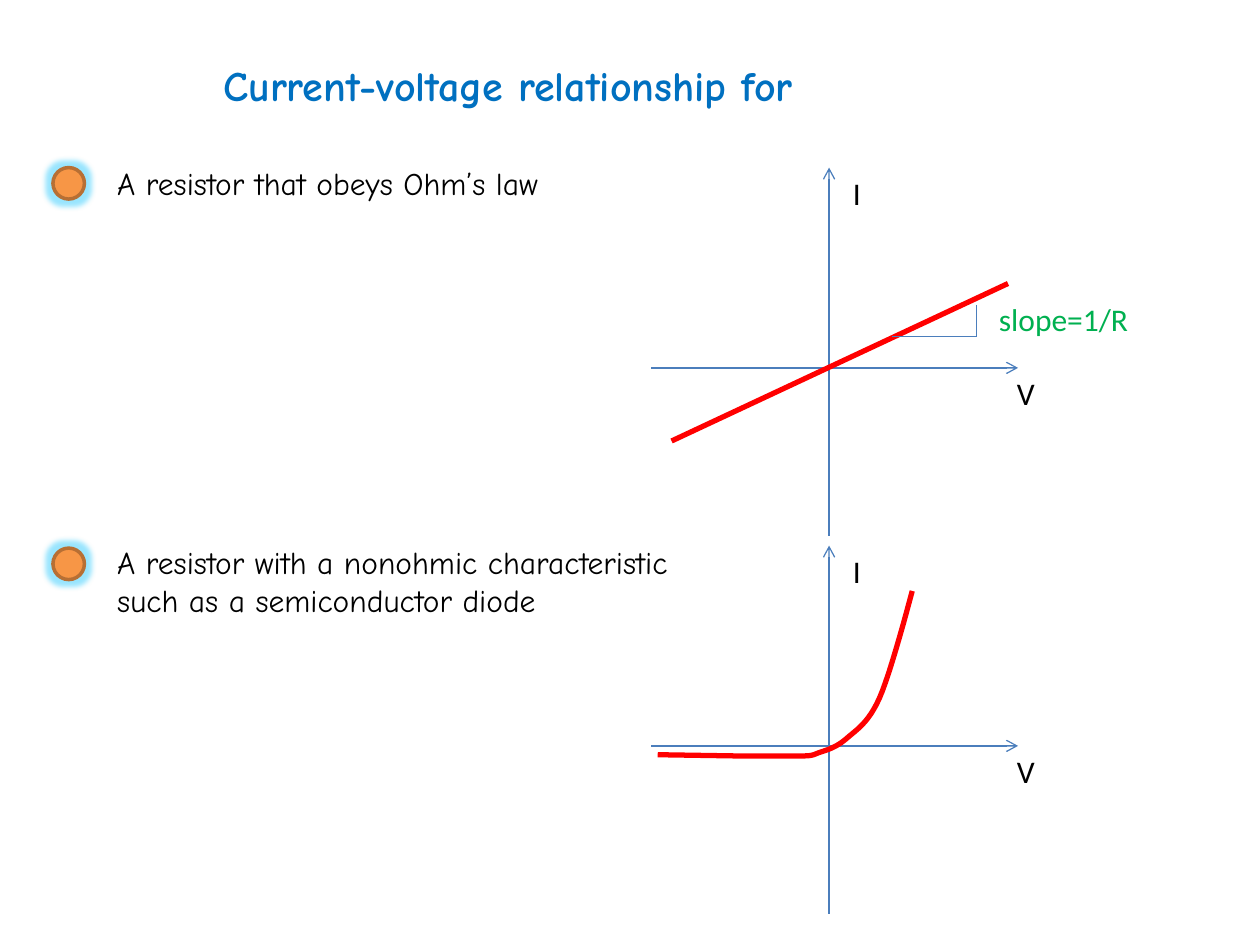
from lxml.etree import SubElement
from pptx import Presentation
from pptx.dml.color import RGBColor
from pptx.enum.shapes import MSO_CONNECTOR as Connector, MSO_SHAPE as Shape
from pptx.enum.text import MSO_ANCHOR as Anchor, MSO_AUTO_SIZE as AutoSize, PP_ALIGN as Align
from pptx.oxml.ns import qn
from pptx.util import Inches, Pt

AXIS_COLOR = "4B7EBC"
CURVE_COLOR = "FF0000"
DIODE_START = (5.22, 5.99)
DIODE_KNEE = (5.88, 6)
DIODE_BENDS = [
    ((6.07, 6), (6.25, 6), (6.35, 6)),
    ((6.46, 6), (6.45, 5.99), (6.51, 5.97)),
    ((6.57, 5.95), (6.64, 5.93), (6.72, 5.86)),
    ((6.8, 5.79), (6.89, 5.74), (6.98, 5.54)),
    ((7.07, 5.34), (7.24, 4.69), (7.24, 4.69)),
]


def rgb(color):
    """Turn a hex string into a colour."""
    return RGBColor.from_string(color)


def style_line(line, color, width):
    """Set the colour and the width of a line."""
    line.color.rgb = rgb(color)
    line.width = Pt(width)


def write_lines(frame, lines, font_name, size, color, bold=False):
    """Fill a text frame with left-aligned, unbulleted paragraphs."""
    frame.auto_size = AutoSize.NONE
    frame.vertical_anchor = Anchor.TOP
    frame.text = "\n".join(lines)
    for paragraph in frame.paragraphs:
        properties = paragraph._p.get_or_add_pPr()
        properties.set("marL", "0")
        properties.set("indent", "0")
        SubElement(properties, qn("a:buNone"))
        paragraph.alignment = Align.LEFT
        paragraph.space_before = Pt(0)
        font = paragraph.font
        font.name, font.size, font.bold = font_name, Pt(size), bold
        font.color.rgb = rgb(color)


def place(shape, left, top, width, height):
    """Move and resize a placeholder."""
    shape.left, shape.top = Inches(left), Inches(top)
    shape.width, shape.height = Inches(width), Inches(height)


def add_label(slide, text, left, top, width, color="000000", wrap=False):
    """Add a one-line graph label."""
    box = slide.shapes.add_textbox(Inches(left), Inches(top), Inches(width), Inches(0.4))
    box.text_frame.word_wrap = wrap
    write_lines(box.text_frame, [text], "Calibri", 18, color)


def add_line(slide, start, end, color=AXIS_COLOR, width=0.75, arrow=False):
    """Add a straight line, with an optional arrowhead at its end."""
    line = slide.shapes.add_connector(Connector.STRAIGHT, *map(Inches, start + end))
    style_line(line.line, color, width)
    SubElement(line._element.spPr, qn("a:effectLst"))
    if arrow:
        SubElement(line.line._get_or_add_ln(), qn("a:tailEnd"), type="arrow")


def add_marker(slide, left, top):
    """Add a glowing round list marker."""
    marker = slide.shapes.add_shape(Shape.OVAL, Inches(left), Inches(top), Inches(0.25), Inches(0.25))
    marker.fill.solid()
    marker.fill.fore_color.rgb = rgb("F79646")
    style_line(marker.line, "B76F34", 2)
    marker.shadow.inherit = False
    effects = marker._element.spPr.find(qn("a:effectLst"))
    glow = SubElement(effects, qn("a:glow"), rad=str(Pt(6)))
    color = SubElement(glow, qn("a:srgbClr"), val="33CCFF")
    SubElement(color, qn("a:alpha"), val="50000")


def add_axes(slide, center_x, center_y):
    """Add the current and voltage axes with their labels."""
    add_line(slide, (center_x, center_y + 1.33), (center_x, center_y - 1.59), arrow=True)
    add_line(slide, (center_x - 1.41, center_y), (center_x + 1.5, center_y), arrow=True)
    add_label(slide, "I", center_x + 0.09, center_y - 1.59, 0.27)
    add_label(slide, "V", center_x + 1.42, center_y, 0.17, wrap=True)


def bezier_points(start, first, second, end, steps=12):
    """Return points along a cubic curve, without its start."""
    points = []
    for step in range(1, steps + 1):
        t = step / steps
        weights = ((1 - t) ** 3, 3 * t * (1 - t) ** 2, 3 * t * t * (1 - t), t ** 3)
        points.append(tuple(
            sum(weight * value for weight, value in zip(weights, values))
            for values in zip(start, first, second, end)))
    return points


def add_diode_curve(slide):
    """Add the smooth characteristic of the diode."""
    points = [DIODE_KNEE]
    for bend in DIODE_BENDS:
        points += bezier_points(points[-1], *bend)
    builder = slide.shapes.build_freeform(*map(Inches, DIODE_START))
    builder.add_line_segments([(Inches(x), Inches(y)) for x, y in points], close=False)
    curve = builder.convert_to_shape()
    curve.fill.background()
    style_line(curve.line, CURVE_COLOR, 3)
    curve.shadow.inherit = False


def main():
    """Build the slide and save it."""
    presentation = Presentation()
    presentation.slide_width, presentation.slide_height = Inches(10), Inches(7.5)
    slide = presentation.slides.add_slide(presentation.slide_layouts[3])
    title, ohmic, nonohmic = slide.placeholders

    place(title, 1.67, 0.42, 6.5, 0.5)
    write_lines(title.text_frame, ["Current-voltage relationship for"], "Comic Neue", 24, "0070C0", True)
    place(ohmic, 0.83, 1.25, 4.33, 0.4)
    write_lines(ohmic.text_frame, ["A resistor that obeys Ohm’s law"], "Comic Neue", 18, "000000")
    place(nonohmic, 0.83, 4.26, 6.17, 0.71)
    write_lines(
        nonohmic.text_frame,
        ["A resistor with a nonohmic characteristic", "such as a semiconductor diode"],
        "Comic Neue", 18, "000000")

    for marker_top, center_y in ((1.33, 2.92), (4.35, 5.92)):
        add_marker(slide, 0.42, marker_top)
        add_axes(slide, 6.58, center_y)

    add_line(slide, (5.33, 3.5), (8, 2.25), CURVE_COLOR, 3)
    add_line(slide, (7.75, 2.42), (7.75, 2.67))
    add_line(slide, (7.75, 2.67), (7.08, 2.67))
    add_label(slide, "slope=1/R", 7.83, 2.33, 1.24, "00B050")
    add_diode_curve(slide)

    presentation.save("out.pptx")


if __name__ == "__main__":
    main()
